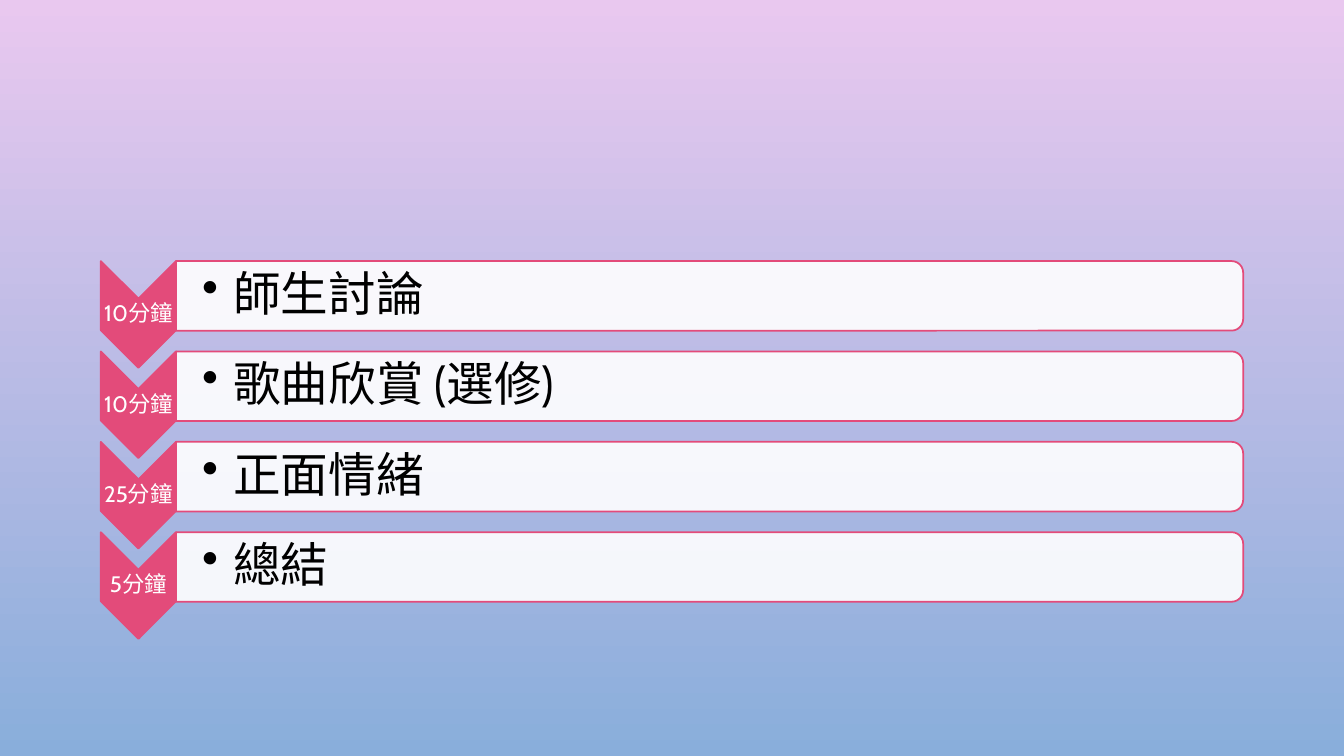
import pptx
import pptx.dml.color
import pptx.enum.shapes
import pptx.enum.text
import pptx.oxml.ns
import pptx.util
from dataclasses import dataclass
from lxml import etree

Inches = pptx.util.Inches
Shapes = pptx.enum.shapes.MSO_SHAPE
Align = pptx.enum.text.PP_ALIGN
qn = pptx.oxml.ns.qn

WIDTH, HEIGHT = 13.33, 7.5
MARGIN, COLUMNS = 1, 15.2
FIRST_TOP, LAST_TOP = 2.59, 5.28

AGENDA = [
    ("10分鐘", "師生討論"),
    ("10分鐘", "歌曲欣賞 (選修)"),
    ("25分鐘", "正面情緒"),
    ("5分鐘", "總結"),
]


@dataclass(frozen=True)
class Theme:
    sky_top: str = "E9C8EF"
    sky_bottom: str = "89AEDB"
    accent: str = "E34B7A"
    panel: str = "FFFFFF"
    time_text: str = "FFFFFF"
    topic_text: str = "000000"
    font: str = "Cabin"
    time_size: int = 16
    topic_size: int = 34
    line_width: float = 1.25


def rgb(value):
    return pptx.dml.color.RGBColor.from_string(value)


class AgendaSlide:
    def __init__(self, presentation, theme):
        self.theme = theme
        self.slide = presentation.slides.add_slide(presentation.slide_layouts[6])
        self.column = (WIDTH - 2 * MARGIN) / COLUMNS
        self.row = (LAST_TOP - FIRST_TOP) / (len(AGENDA) - 1)

    def place(self, column, row, columns, rows):
        """Turn grid units into left, top, width and height in inches."""
        return (MARGIN + column * self.column, FIRST_TOP + row * self.row,
                columns * self.column, rows * self.row)

    def background(self):
        fill = self.slide.background.fill
        fill.gradient()
        fill.gradient_angle = 270
        for stop, color in zip(fill.gradient_stops,
                               (self.theme.sky_top, self.theme.sky_bottom)):
            stop.color.rgb = rgb(color)

    def turned_shape(self, kind, cell, fill, opacity=100):
        """Add a shape turned by 90 degrees that covers the given cell."""
        left, top, width, height = self.place(*cell)
        shift = (width - height) / 2
        shape = self.slide.shapes.add_shape(
            kind, Inches(left + shift), Inches(top - shift),
            Inches(height), Inches(width))
        shape.rotation = 90
        shape.shadow.inherit = False
        shape.fill.solid()
        shape.fill.fore_color.rgb = rgb(fill)
        if opacity < 100:
            color = shape.fill._xPr.find(".//" + qn("a:srgbClr"))
            etree.SubElement(color, qn("a:alpha"), val=str(opacity * 1000))
        shape.line.color.rgb = rgb(self.theme.accent)
        shape.line.width = pptx.util.Pt(self.theme.line_width)

    def text(self, words, cell, size, color, inset, left_inset, bullet=False):
        box = self.slide.shapes.add_textbox(*map(Inches, self.place(*cell)))
        frame = box.text_frame
        frame.word_wrap = True
        frame.vertical_anchor = pptx.enum.text.MSO_ANCHOR.MIDDLE
        frame.margin_left = Inches(left_inset)
        frame.margin_top = frame.margin_right = frame.margin_bottom = Inches(inset)
        paragraph = frame.paragraphs[0]
        if bullet:
            self.bullet(paragraph)
        else:
            paragraph.alignment = Align.CENTER
        paragraph.line_spacing = 0.9
        run = paragraph.add_run()
        run.text = words
        run.font.name = self.theme.font
        run.font.size = pptx.util.Pt(size)
        run.font.color.rgb = rgb(color)

    def bullet(self, paragraph):
        paragraph.level = 1
        properties = paragraph._p.get_or_add_pPr()
        properties.set("marL", str(Inches(0.31)))
        properties.set("indent", str(-Inches(0.31)))
        etree.SubElement(properties, qn("a:buChar"), char="•")

    def agenda_item(self, row, time, topic):
        theme = self.theme
        self.turned_shape(Shapes.CHEVRON, (0, row, 1, 1.18), theme.accent)
        self.text(time, (0, row + 0.41, 1, 0.36), theme.time_size,
                  theme.time_text, inset=0.01, left_inset=0.01)
        self.turned_shape(Shapes.ROUND_2_SAME_RECTANGLE,
                          (1, row, COLUMNS - 1, 0.77), theme.panel, opacity=90)
        self.text(topic, (1, row + 0.04, COLUMNS - 1.04, 0.69), theme.topic_size,
                  theme.topic_text, inset=0.02, left_inset=0.26, bullet=True)


def main():
    presentation = pptx.Presentation()
    presentation.slide_width = Inches(WIDTH)
    presentation.slide_height = Inches(HEIGHT)
    agenda = AgendaSlide(presentation, Theme())
    agenda.background()
    for row, (time, topic) in enumerate(AGENDA):
        agenda.agenda_item(row, time, topic)
    presentation.save("out.pptx")


if __name__ == "__main__":
    main()
